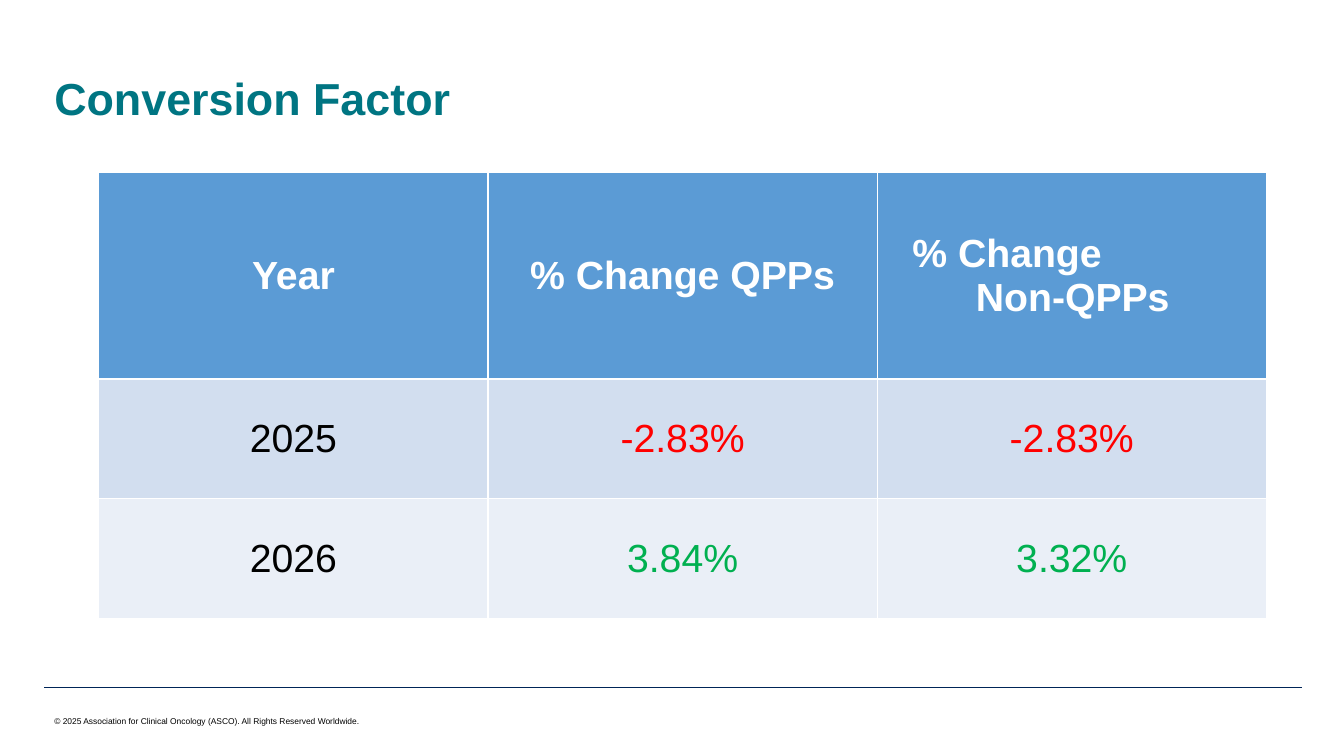
"""Build the Conversion Factor slide: a title, a table and a footer."""
from lxml.etree import SubElement
from pptx import Presentation
from pptx.dml.color import RGBColor as Rgb
from pptx.enum.shapes import MSO_CONNECTOR as Conn
from pptx.enum.text import MSO_ANCHOR as Anchor, PP_ALIGN as Align
from pptx.oxml.ns import qn
from pptx.util import Inches as In, Pt

theme = {
    "font": "Arial",
    "title": (32, "007582", True),
    "head": (28, "FFFFFF", True),
    "year": (28, "000000", False),
    "loss": (28, "FF0000", False),
    "gain": (28, "00B050", False),
    "foot": (6, "000000", False),
    "rule": "002557",
    "fills": ["5B9BD5", "D2DEEF", "EAEFF7"],
}


def style(para, kind):
    size, color, bold = theme[kind]
    for run in para.runs:
        font = run.font
        font.name, font.size, font.bold = theme["font"], Pt(size), bold
        font.color.rgb = Rgb.from_string(color)


def label(text, kind, left, top, width, height, wrap, anchor):
    box = slide.shapes.add_textbox(In(left), In(top), In(width), In(height))
    frame = box.text_frame
    frame.text = text
    frame.word_wrap = wrap
    frame.vertical_anchor = anchor
    style(frame.paragraphs[0], kind)
    return frame.paragraphs[0]


deck = Presentation()
deck.slide_width, deck.slide_height = In(13.33), In(7.5)
slide = deck.slides.add_slide(deck.slide_layouts[6])
edge = 0.44

rule = slide.shapes.add_connector(Conn.STRAIGHT, In(edge), In(6.82), In(12.91), In(6.82))
rule.line.color.rgb = Rgb.from_string(theme["rule"])
rule.line.width = Pt(0.25)
SubElement(rule._element.spPr, qn("a:effectLst"))

label("© 2025 Association for Clinical Oncology (ASCO). All Rights Reserved Worldwide.",
      "foot", edge, 7.06, 3.3, 0.2, False, Anchor.TOP)
title = label("Conversion Factor", "title", edge, 0.24, 12.45, 1.05, True, Anchor.BOTTOM)
title.line_spacing = 0.9

rows = [
    ["Year", "% Change QPPs", "% Change\vNon-QPPs"],
    ["2025", "-2.83%", "-2.83%"],
    ["2026", "3.84%", "3.32%"],
]
kinds = [["head"] * 3, ["year", "loss", "loss"], ["year", "gain", "gain"]]
tall = [2.05, 1.19, 1.19]
table = slide.shapes.add_table(3, 3, In(0.98), In(1.71), In(11.58), In(sum(tall))).table

for r, texts in enumerate(rows):
    table.rows[r].height = In(tall[r])
    for c, text in enumerate(texts):
        cell = table.cell(r, c)
        cell.text = text
        cell.vertical_anchor = Anchor.MIDDLE
        cell.fill.solid()
        cell.fill.fore_color.rgb = Rgb.from_string(theme["fills"][r])
        para = cell.text_frame.paragraphs[0]
        para.alignment = Align.CENTER
        style(para, kinds[r][c])

split = table.cell(0, 2).text_frame.paragraphs[0]
split.alignment = Align.LEFT
props = split._p.get_or_add_pPr()
props.set("marL", str(In(0.88)))
props.set("indent", str(In(-0.63)))

deck.save("out.pptx")
